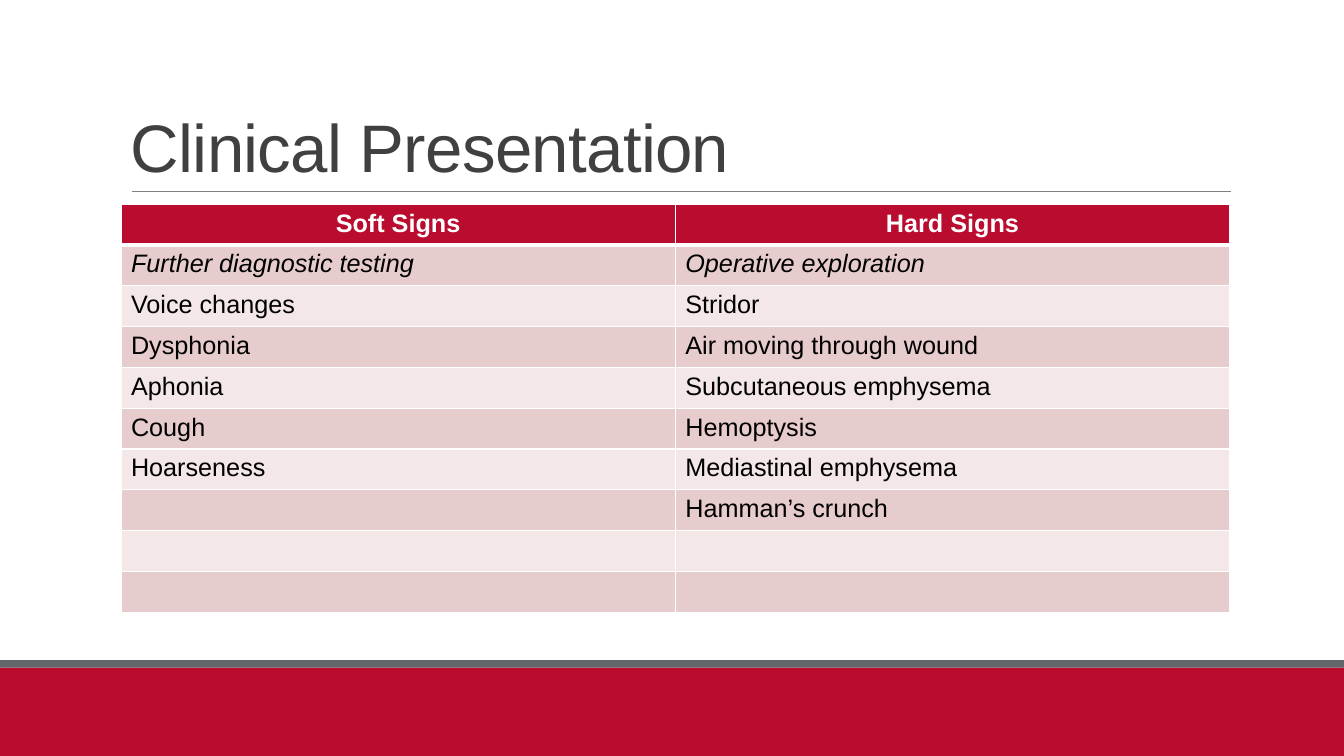
from dataclasses import dataclass
from itertools import zip_longest

from lxml.etree import SubElement
from pptx import Presentation
from pptx.dml.color import RGBColor
from pptx.enum.shapes import MSO_CONNECTOR, MSO_SHAPE
from pptx.enum.text import MSO_ANCHOR, PP_ALIGN
from pptx.oxml import parse_xml
from pptx.oxml.ns import nsdecls, qn
from pptx.slide import Slide
from pptx.table import _Cell
from pptx.text.text import _Paragraph
from pptx.util import Inches, Pt

SLIDE_WIDTH, SLIDE_HEIGHT = Inches(13.33), Inches(7.5)


@dataclass(frozen=True)
class Theme:
    font: str = "Arial"
    title_size: int = 48
    cell_size: int = 18
    crimson: str = "BA0C2F"
    slate: str = "63666A"
    rule: str = "808080"
    title: str = "404040"
    body: str = "000000"
    white: str = "FFFFFF"
    bands: tuple[str, str] = ("E7CCCD", "F3E7E8")


@dataclass(frozen=True)
class Area:
    """A rectangle in percent of the slide's width and height."""
    left: float
    top: float
    width: float
    height: float

    def emu(self) -> tuple[int, int, int, int]:
        return (across(self.left), down(self.top),
                across(self.width), down(self.height))


@dataclass(frozen=True)
class Band:
    area: Area
    color: str


@dataclass(frozen=True)
class SignColumn:
    heading: str
    action: str
    signs: tuple[str, ...]


THEME = Theme()
FOOTER_BANDS = (
    Band(Area(0, 88.3, 100, 11.7), THEME.crimson),
    Band(Area(0, 87.3, 100, 1), THEME.slate),
)
TITLE_AREA = Area(9, 4.13, 82.5, 21.2)
TABLE_AREA = Area(9, 27, 82.5, 54)
RULE_LEFT, RULE_RIGHT, RULE_TOP = 9.82, 91.58, 25.33
TABLE_ROWS = 10
SIGN_COLUMNS = (
    SignColumn("Soft Signs", "Further diagnostic testing",
               ("Voice changes", "Dysphonia", "Aphonia", "Cough", "Hoarseness")),
    SignColumn("Hard Signs", "Operative exploration",
               ("Stridor", "Air moving through wound", "Subcutaneous emphysema",
                "Hemoptysis", "Mediastinal emphysema", "Hamman’s crunch")),
)


def across(percent: float) -> int:
    return round(SLIDE_WIDTH * percent / 100)


def down(percent: float) -> int:
    return round(SLIDE_HEIGHT * percent / 100)


def style_font(paragraph: _Paragraph, size: int, color: str,
               bold: bool = False, italic: bool = False) -> None:
    font = paragraph.font
    font.name, font.size = THEME.font, Pt(size)
    font.bold, font.italic = bold, italic
    font.color.rgb = RGBColor.from_string(color)


def add_band(slide: Slide, band: Band) -> None:
    bar = slide.shapes.add_shape(MSO_SHAPE.RECTANGLE, *band.area.emu())
    bar.shadow.inherit = False
    bar.fill.solid()
    bar.fill.fore_color.rgb = RGBColor.from_string(band.color)
    bar.line.fill.background()


def add_title_rule(slide: Slide) -> None:
    rule = slide.shapes.add_connector(
        MSO_CONNECTOR.STRAIGHT, across(RULE_LEFT), down(RULE_TOP),
        across(RULE_RIGHT), down(RULE_TOP))
    rule.line.color.rgb = RGBColor.from_string(THEME.rule)
    rule.line.width = Pt(0.5)
    SubElement(rule._element.spPr, qn("a:effectLst"))


def add_title(slide: Slide, wording: str) -> None:
    frame = slide.shapes.add_textbox(*TITLE_AREA.emu()).text_frame
    frame.word_wrap = True
    frame.vertical_anchor = MSO_ANCHOR.BOTTOM
    heading = frame.paragraphs[0]
    heading.line_spacing = 0.85
    run = heading.add_run()
    run.text = wording
    run._r.get_or_add_rPr().set("spc", "-50")
    style_font(heading, THEME.title_size, THEME.title)


def add_borders(cell: _Cell, top: int, bottom: int) -> None:
    """Draw white borders, one point wide at the sides."""
    widths = {"lnL": 1, "lnR": 1, "lnT": top, "lnB": bottom}
    properties = cell._tc.get_or_add_tcPr()
    for position, (side, width) in enumerate(widths.items()):
        properties.insert(position, parse_xml(
            f'<a:{side} {nsdecls("a")} w="{Pt(width)}"><a:solidFill>'
            f'<a:srgbClr val="{THEME.white}"/></a:solidFill></a:{side}>'))


def fill_cell(cell: _Cell, row: int, wording: str) -> None:
    is_heading = row == 0
    cell.text = wording
    paragraph = cell.text_frame.paragraphs[0]
    if is_heading:
        paragraph.alignment = PP_ALIGN.CENTER
    style_font(paragraph, THEME.cell_size,
               THEME.white if is_heading else THEME.body,
               bold=is_heading, italic=row == 1)
    cell.fill.solid()
    cell.fill.fore_color.rgb = RGBColor.from_string(
        THEME.crimson if is_heading else THEME.bands[(row - 1) % 2])
    add_borders(cell, top=3 if row == 1 else 1, bottom=3 if is_heading else 1)


def add_sign_table(slide: Slide) -> None:
    table = slide.shapes.add_table(
        TABLE_ROWS, len(SIGN_COLUMNS), *TABLE_AREA.emu()).table
    for column, content in enumerate(SIGN_COLUMNS):
        wordings = (content.heading, content.action, *content.signs)
        for row, wording in zip_longest(range(TABLE_ROWS), wordings, fillvalue=""):
            fill_cell(table.cell(row, column), row, wording)


def main() -> None:
    deck = Presentation()
    deck.slide_width, deck.slide_height = SLIDE_WIDTH, SLIDE_HEIGHT
    slide = deck.slides.add_slide(deck.slide_layouts[6])
    for band in FOOTER_BANDS:
        add_band(slide, band)
    add_title_rule(slide)
    add_title(slide, "Clinical Presentation")
    add_sign_table(slide)
    deck.save("out.pptx")


if __name__ == "__main__":
    main()
